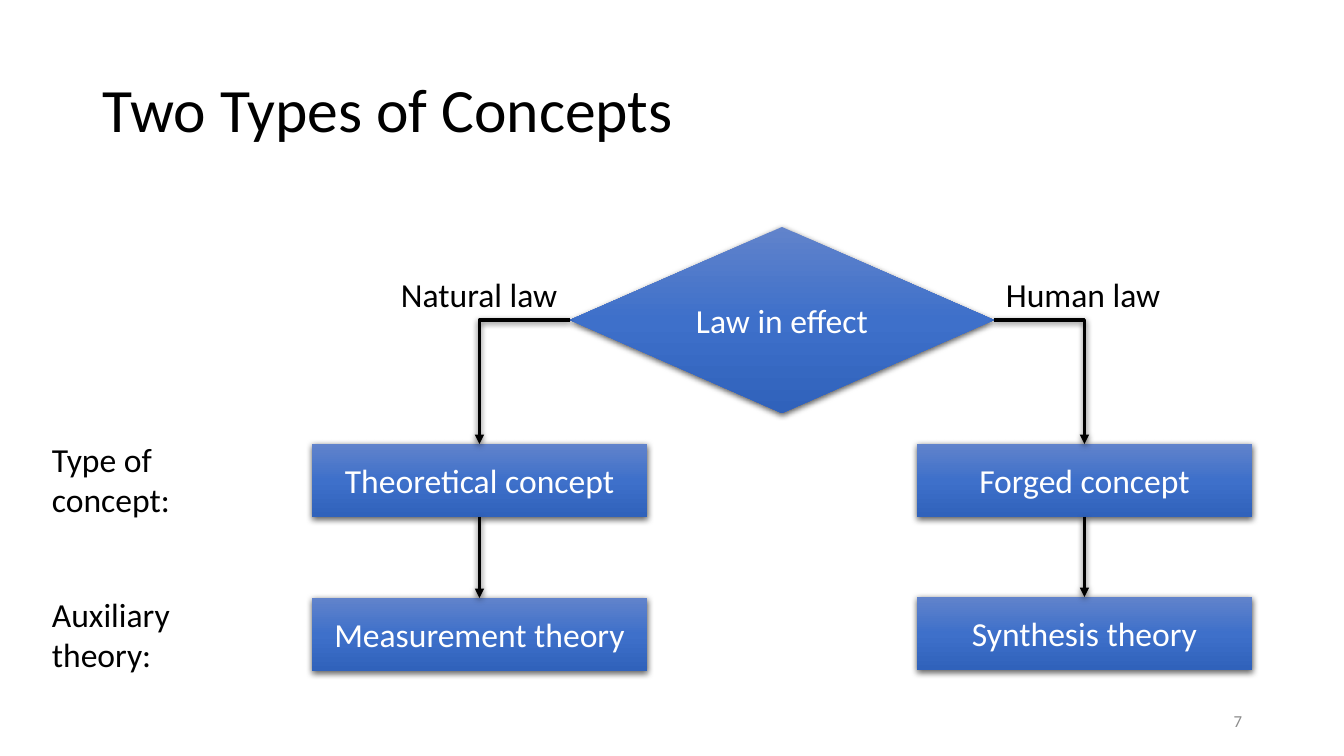
from copy import deepcopy
from pptx import Presentation, util as u
from pptx.dml.color import RGBColor
from pptx.enum import shapes, text
from pptx.oxml import parse_xml
from pptx.oxml.ns import nsdecls, qn

PX = 914400 / 100.8
BLACK = RGBColor(0x00, 0x00, 0x00)
WHITE = RGBColor(0xFF, 0xFF, 0xFF)
GRAY = RGBColor(0x8C, 0x8C, 0x8C)
GRADIENT = [(0, RGBColor(0x61, 0x83, 0xCB)),
            (0.5, RGBColor(0x3E, 0x70, 0xCA)),
            (1, RGBColor(0x30, 0x62, 0xBB))]
SHADOW = (f'<a:effectLst {nsdecls("a")}>'
          '<a:outerShdw blurRad="57150" dist="19050" dir="5400000" algn="ctr" rotWithShape="0">'
          '<a:srgbClr val="000000"><a:alpha val="63000"/></a:srgbClr>'
          '</a:outerShdw></a:effectLst>')

prs = Presentation()
prs.slide_width, prs.slide_height = u.Emu(round(1344 * PX)), u.Emu(round(756 * PX))
s = prs.slides.add_slide(prs.slide_layouts[6])


def px(*lengths):
    return [u.Emu(round(n * PX)) for n in lengths]


def write(sp, words, size, color, align, anchor, wrap):
    tf = sp.text_frame
    tf.word_wrap = wrap
    tf.vertical_anchor = anchor
    p = tf.paragraphs[0]
    p.text = words
    p.alignment = align
    p.font.name, p.font.size, p.font.color.rgb = "Calibri", u.Pt(size), color
    return p


TOP, MIDDLE = text.MSO_ANCHOR.TOP, text.MSO_ANCHOR.MIDDLE
LEFT, CENTER, RIGHT = text.PP_ALIGN.LEFT, text.PP_ALIGN.CENTER, text.PP_ALIGN.RIGHT

# Title and slide number
title = s.shapes.add_textbox(*px(93, 40, 1159, 146))
write(title, "Two Types of Concepts", 44, BLACK, LEFT, MIDDLE, True).line_spacing = 0.9
number = s.shapes.add_textbox(*px(950, 701, 302, 40))
write(number, "7", 12, GRAY, RIGHT, MIDDLE, True)

# Decision diamond and the boxes of both branches
DIAMOND, BOX = shapes.MSO_SHAPE.DIAMOND, shapes.MSO_SHAPE.RECTANGLE
nodes = {}
for words, kind, box in [
    ("Law in effect", DIAMOND, (570, 227, 424, 186)),
    ("Theoretical concept", BOX, (312, 444, 335, 73)),
    ("Forged concept", BOX, (917, 444, 335, 73)),
    ("Measurement theory", BOX, (312, 598, 335, 73)),
    ("Synthesis theory", BOX, (917, 597, 335, 73)),
]:
    sp = nodes[words] = s.shapes.add_shape(kind, *px(*box))
    sp.fill.gradient()
    sp.fill.gradient_angle = 270
    stops = sp._element.spPr.find(".//" + qn("a:gsLst"))
    stops.insert(1, deepcopy(stops[0]))
    for stop, (position, color) in zip(sp.fill.gradient_stops, GRADIENT):
        stop.position, stop.color.rgb = position, color
    sp.line.fill.background()
    sp._element.spPr.append(parse_xml(SHADOW))
    write(sp, words, 24, WHITE, CENTER, MIDDLE, False)

# Arrows: bent from the diamond, straight between the boxes
ELBOW, STRAIGHT = shapes.MSO_CONNECTOR.ELBOW, shapes.MSO_CONNECTOR.STRAIGHT
for kind, start, side, end, points in [
    (ELBOW, "Law in effect", 1, "Theoretical concept", (570, 320, 480, 444)),
    (ELBOW, "Law in effect", 3, "Forged concept", (994, 320, 1084, 444)),
    (STRAIGHT, "Theoretical concept", 2, "Measurement theory", (480, 517, 480, 598)),
    (STRAIGHT, "Forged concept", 2, "Synthesis theory", (1084, 517, 1084, 597)),
]:
    arrow = s.shapes.add_connector(kind, *px(*points))
    arrow.begin_connect(nodes[start], side)
    arrow.end_connect(nodes[end], 0)
    arrow.line.color.rgb, arrow.line.width = BLACK, u.Pt(2.25)
    spPr = arrow._element.spPr
    if kind == ELBOW:
        spPr.find(qn("a:prstGeom")).set("prst", "bentConnector2")
    arrow.line._get_or_add_ln().append(parse_xml(f'<a:tailEnd {nsdecls("a")} type="triangle"/>'))
    spPr.append(parse_xml(SHADOW))

# Branch and row labels
for words, box in [
    ("Natural law", (391, 269, 178, 50)),
    ("Human law", (996, 269, 176, 50)),
    ("Type of\vconcept:", (42, 434, 139, 92)),
    ("Auxiliary\vtheory:", (42, 589, 139, 92)),
]:
    label = s.shapes.add_textbox(*px(*box))
    write(label, words, 24, BLACK, LEFT, TOP, False)
    label.text_frame.auto_size = text.MSO_AUTO_SIZE.SHAPE_TO_FIT_TEXT

prs.save("out.pptx")
